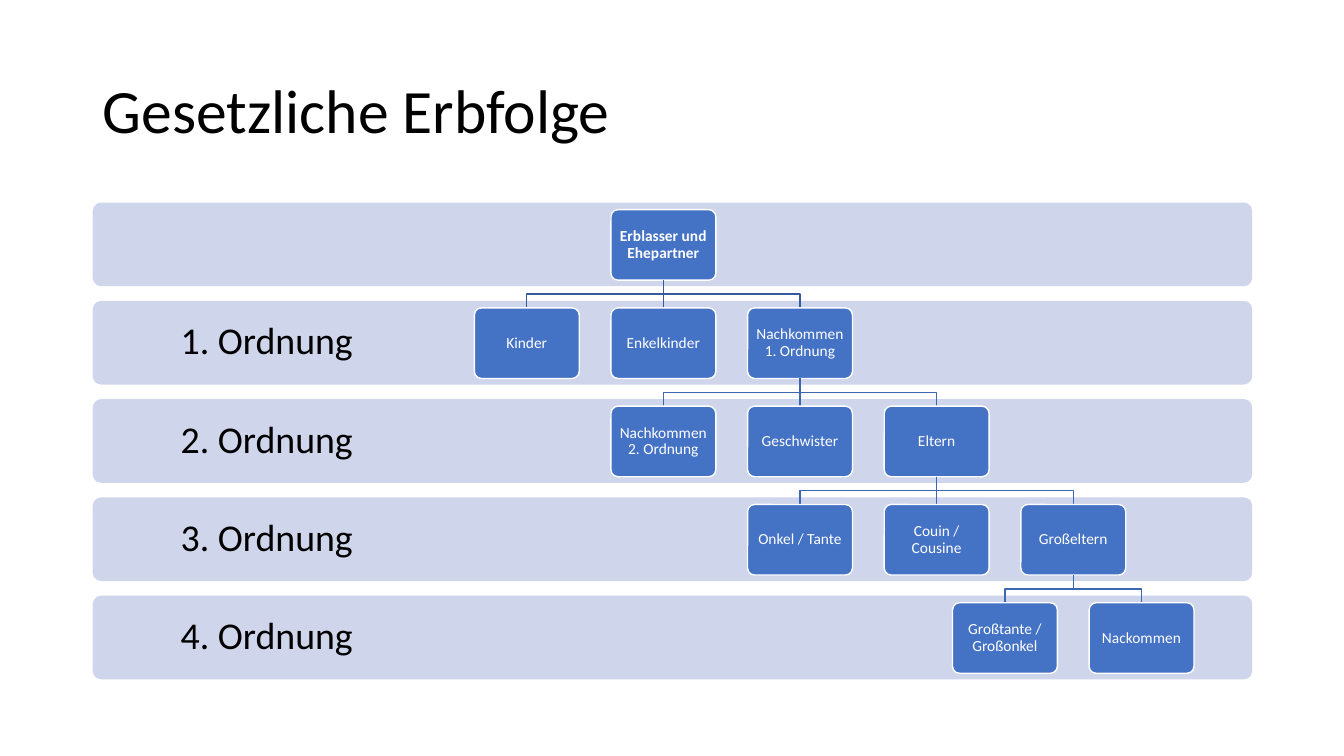
from pptx import Presentation
from pptx.dml.color import RGBColor
from pptx.enum.shapes import MSO_CONNECTOR, MSO_SHAPE
from pptx.enum.text import MSO_ANCHOR, PP_ALIGN
from pptx.util import Inches, Pt
from lxml import etree

# Content: band label, index of the parent in the level above, people
TITLE = "Gesetzliche Erbfolge"
LEVELS = [
    ("", None, ["Erblasser und Ehepartner"]),
    ("1. Ordnung", 0, ["Kinder", "Enkelkinder", "Nachkommen 1. Ordnung"]),
    ("2. Ordnung", 2, ["Nachkommen 2. Ordnung", "Geschwister", "Eltern"]),
    ("3. Ordnung", 2, ["Onkel / Tante", "Couin / Cousine", "Großeltern"]),
    ("4. Ordnung", 2, ["Großtante / Großonkel", "Nackommen"]),
]

# Colours and text formats
BLACK = RGBColor(0x00, 0x00, 0x00)
WHITE = RGBColor(0xFF, 0xFF, 0xFF)
BAND = RGBColor(0xCF, 0xD5, 0xEA)
BLUE = RGBColor(0x44, 0x72, 0xC4)
FIRST_LINE = RGBColor(0x36, 0x5B, 0x9D)
LATER_LINE = RGBColor(0x3E, 0x67, 0xB2)
TITLE_FONT = {"name": "Calibri", "size": Pt(44), "bold": False}
LABEL_FONT = {"name": "Calibri", "size": Pt(27), "bold": False}
PERSON_FONT = {"name": "Calibri", "size": Pt(11), "bold": False}
ROOT_FONT = {**PERSON_FONT, "bold": True}

# Geometry in inches
BAND_LEFT, BAND_TOP, BAND_WIDTH, BAND_HEIGHT = 0.92, 2.01, 11.5, 0.83
LABEL_WIDTH = 3.45
LEVEL_STEP = 3.9 / 4
PERSON_WIDTH, PERSON_HEIGHT = 1.04, 0.7
PERSON_STEP = 5.42 / 4
PERSON_OFFSET = 0.07
ROOT_CENTER = 6.58


def write(shape, text, formats, color, align, inset):
    frame = shape.text_frame
    frame.word_wrap = True
    frame.vertical_anchor = MSO_ANCHOR.MIDDLE
    for side in ("left", "right"):
        setattr(frame, f"margin_{side}", Inches(inset))
    for side in ("top", "bottom"):
        setattr(frame, f"margin_{side}", Inches(0.05))
    frame.text = text
    paragraph = frame.paragraphs[0]
    paragraph.alignment = align
    paragraph.line_spacing = 0.9
    for name, value in formats.items():
        setattr(paragraph.font, name, value)
    paragraph.font.color.rgb = color


def add_round_box(left, top, width, height, fill):
    shape = slide.shapes.add_shape(
        MSO_SHAPE.ROUNDED_RECTANGLE, Inches(left), Inches(top), Inches(width), Inches(height))
    shape.adjustments[0] = 0.1
    shape.shadow.inherit = False
    shape.fill.solid()
    shape.fill.fore_color.rgb = fill
    shape.line.color.rgb = WHITE
    shape.line.width = Pt(1)
    return shape


def add_branch(parent_x, child_x, top, bottom, color):
    x1, x2, y1, y2 = (Inches(value) for value in (parent_x, child_x, top, bottom))
    if abs(parent_x - child_x) < 0.01:
        branch = slide.shapes.add_connector(MSO_CONNECTOR.STRAIGHT, x1, y1, x1, y2)
        namespace = "{http://schemas.openxmlformats.org/drawingml/2006/main}"
        branch.line.color.rgb = color
        etree.SubElement(branch._element.spPr, namespace + "effectLst")
    else:
        middle = (y1 + y2) // 2
        builder = slide.shapes.build_freeform(x1, y1)
        builder.add_line_segments([(x1, middle), (x2, middle), (x2, y2)], close=False)
        branch = builder.convert_to_shape()
        branch.shadow.inherit = False
        branch.fill.background()
        branch.line.color.rgb = color
    branch.line.width = Pt(1)


presentation = Presentation()
presentation.slide_width, presentation.slide_height = Inches(13.33), Inches(7.5)
slide = presentation.slides.add_slide(presentation.slide_layouts[5])

# Title
title = slide.shapes.title
title.left, title.top = Inches(0.92), Inches(0.4)
title.width, title.height = Inches(11.5), Inches(1.45)
write(title, TITLE, TITLE_FONT, BLACK, PP_ALIGN.LEFT, 0.1)

# Bands with their labels
for level, (label, _, _) in enumerate(LEVELS):
    top = BAND_TOP + level * LEVEL_STEP
    band = add_round_box(BAND_LEFT, top, BAND_WIDTH, BAND_HEIGHT, BAND)
    band.line.fill.background()
    if label:
        box = slide.shapes.add_textbox(
            Inches(BAND_LEFT), Inches(top), Inches(LABEL_WIDTH), Inches(BAND_HEIGHT))
        write(box, label, LABEL_FONT, BLACK, PP_ALIGN.CENTER, 0.21)

# Family tree: each level is centred under its parent
centers = [ROOT_CENTER]
for level, (_, parent, people) in enumerate(LEVELS):
    top = BAND_TOP + PERSON_OFFSET + level * LEVEL_STEP
    parent_x = ROOT_CENTER if parent is None else centers[parent]
    first = parent_x - (len(people) - 1) / 2 * PERSON_STEP
    centers = [first + index * PERSON_STEP for index in range(len(people))]
    for center, person in zip(centers, people):
        if parent is not None:
            add_branch(parent_x, center, top - LEVEL_STEP + PERSON_HEIGHT, top,
                       FIRST_LINE if level == 1 else LATER_LINE)
        box = add_round_box(center - PERSON_WIDTH / 2, top, PERSON_WIDTH, PERSON_HEIGHT, BLUE)
        write(box, person, ROOT_FONT if parent is None else PERSON_FONT,
              WHITE, PP_ALIGN.CENTER, 0.05)

presentation.save("out.pptx")
